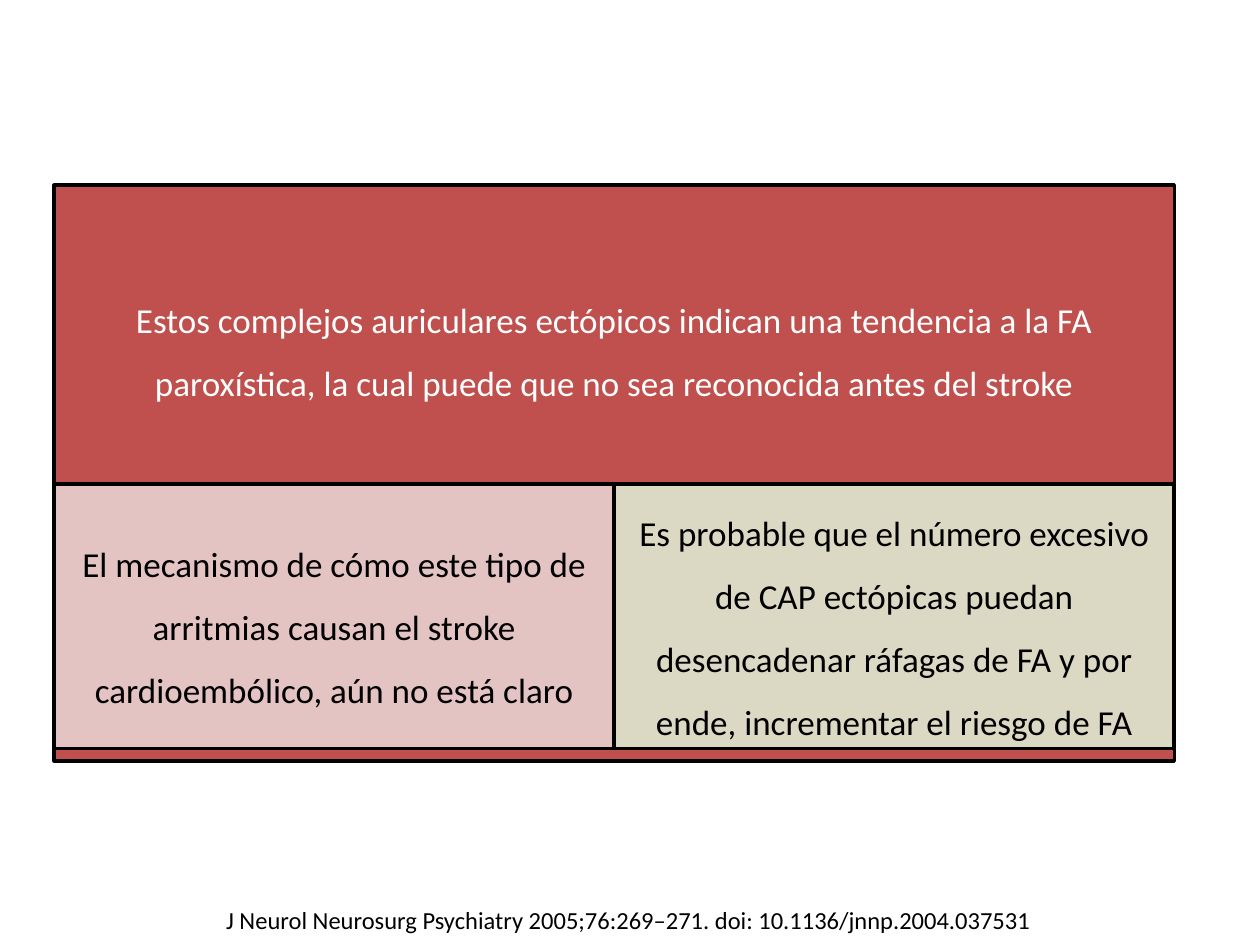
from lxml import etree
from pptx import Presentation
from pptx.dml.color import RGBColor
from pptx.enum import shapes, text
from pptx.oxml.ns import qn
from pptx.util import Inches, Pt

COLORS = {
    "red": "C0504D",
    "pink": "E8D0D0",
    "green": "DEE7D1",
    "black": "000000",
    "white": "FFFFFF",
}


class SlideBuilder:
    font = "Calibri"
    border = Pt(2)

    def __init__(self, slide):
        self.slide = slide

    def color(self, name):
        return RGBColor.from_string(COLORS[name])

    def panel(self, left, top, width, height, fill, opacity=100):
        """Add a black-edged rectangle, its opacity in percent."""
        panel = self.slide.shapes.add_shape(
            shapes.MSO_SHAPE.RECTANGLE,
            Inches(left), Inches(top), Inches(width), Inches(height))
        panel.shadow.inherit = False
        panel.fill.solid()
        panel.fill.fore_color.rgb = self.color(fill)
        if opacity < 100:
            solid = panel.element.spPr.find(qn("a:solidFill"))
            alpha = etree.SubElement(solid.find(qn("a:srgbClr")), qn("a:alpha"))
            alpha.set("val", str(opacity * 1000))
        panel.line.color.rgb = self.color("black")
        panel.line.width = self.border
        return panel

    def textbox(self, left, top, width, height):
        return self.slide.shapes.add_textbox(
            Inches(left), Inches(top), Inches(width), Inches(height))

    def label(self, shape, wording, size, color="black"):
        frame = shape.text_frame
        frame.word_wrap = True
        frame.text = wording
        paragraph = frame.paragraphs[0]
        paragraph.alignment = text.PP_ALIGN.CENTER
        font = paragraph.runs[0].font
        font.name = self.font
        font.size = Pt(size)
        font.color.rgb = self.color(color)

    def statement(self, shape, wording, color="black", inset=0.03):
        """Set a vertically centred, widely spaced sentence."""
        self.label(shape, wording, 20, color)
        frame = shape.text_frame
        frame.vertical_anchor = text.MSO_ANCHOR.MIDDLE
        frame.margin_left = frame.margin_right = Inches(0.16)
        frame.margin_top = frame.margin_bottom = Inches(inset)
        frame.paragraphs[0].line_spacing = 1.5


def main():
    deck = Presentation()
    deck.slide_width, deck.slide_height = Inches(10), Inches(7.5)
    builder = SlideBuilder(deck.slides.add_slide(deck.slide_layouts[6]))

    left, top, width = 0.43, 1.47, 8.89
    builder.panel(left, top, width, 4.57, "red")
    builder.statement(
        builder.textbox(left, top, width, 2.47),
        "Estos complejos auriculares ectópicos indican una tendencia a la FA "
        "paroxística, la cual puede que no sea reconocida antes del stroke",
        "white", inset=0.16)

    findings = [
        ("pink", "El mecanismo de cómo este tipo de arritmias causan el stroke "
                 "cardioembólico, aún no está claro"),
        ("green", "Es probable que el número excesivo de CAP ectópicas puedan "
                  "desencadenar ráfagas de FA y por ende, incrementar el riesgo "
                  "de FA"),
    ]
    half = width / len(findings)
    for column, (fill, wording) in enumerate(findings):
        finding = builder.panel(left + column * half, 3.84, half, 2.1, fill, opacity=90)
        builder.statement(finding, wording)

    citation = builder.textbox(0.98, 7.13, 8.02, 0.34)
    builder.label(
        citation,
        "J Neurol Neurosurg Psychiatry 2005;76:269–271. doi: 10.1136/jnnp.2004.037531",
        14)

    deck.save("out.pptx")


if __name__ == "__main__":
    main()
